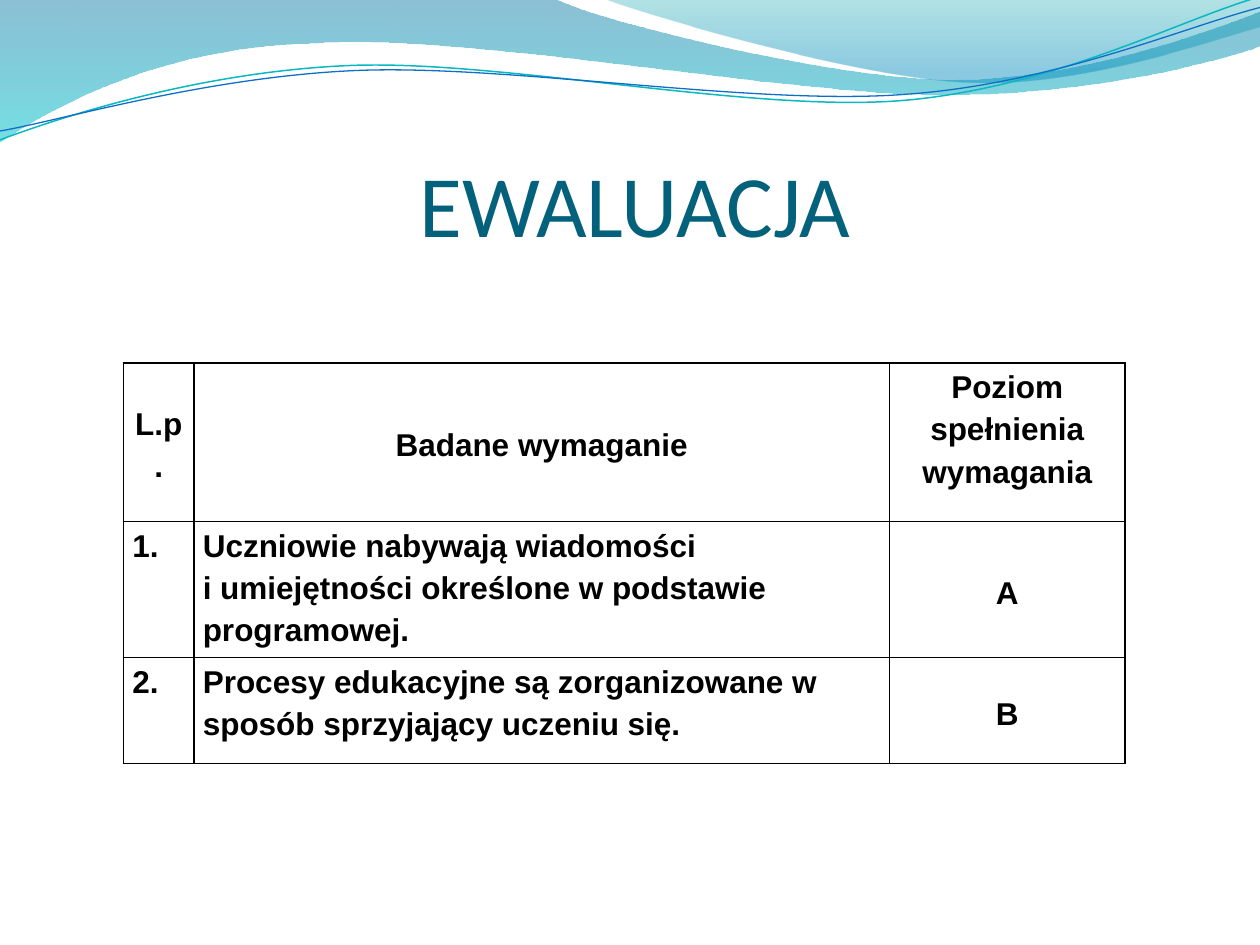
import math

import lxml.etree
import pptx
import pptx.dml.color
import pptx.enum.text
import pptx.oxml.ns
import pptx.util

Inches = pptx.util.Inches
Pt = pptx.util.Pt
qn = pptx.oxml.ns.qn
ALIGN = pptx.enum.text.PP_ALIGN
ANCHOR = pptx.enum.text.MSO_ANCHOR
NBSP = chr(160)

COLORS = {
    "title": "04617B", "text": "000000", "border": "000000",
    "deep": "0074A1", "aqua": "00C6CF", "teal": "00A1A9", "sky": "008BBF",
    "cyan line": "0AB8BF", "blue line": "0F6FC6",
}

WIDE_WAVE = [(0, 0), (4.4, -0.01), (4.76, 0.17, 6.64, 0.63, 7.58, 0.63),
             (8.53, 0.63, 9.58, 0.26, 10, 0.09), (10.01, 0.36),
             (9.83, 0.44, 8.7, 0.76, 7.46, 0.75), (6.22, 0.75, 3.82, 0.28, 2.57, 0.34),
             (1.29, 0.36, 0.46, 0.83, -0.01, 1.13)]
RIGHT_WAVE = [(4.79, -0.01), (5.09, 0.11, 6.82, 0.62, 7.69, 0.65),
              (8.56, 0.69, 9.61, 0.32, 10, 0.21), (10, 0)]
CYAN_CURVE = [(0, 1.11), (0.48, 0.93, 1.58, 0.57, 2.77, 0.52),
              (3.95, 0.47, 5.93, 0.89, 7.13, 0.8), (8.33, 0.71, 9.38, 0.15, 9.98, -0.02)]
BLUE_CURVE = [(0, 1.04), (0.47, 0.96, 1.64, 0.61, 2.83, 0.56),
              (4.03, 0.51, 5.97, 0.84, 7.17, 0.75), (8.36, 0.67, 9.41, 0.21, 10, 0.06)]
CURVE_TILT = 357.3

COLUMN_WIDTHS = [0.56, 5.52, 1.87]
ROW_HEIGHTS = [1.26, 1.03, 0.84]
REQUIREMENTS = [
    ["L.p.", "Badane wymaganie", "Poziom spełnienia wymagania"],
    ["1.", f"Uczniowie nabywają wiadomości i{NBSP}umiejętności określone "
           f"w{NBSP}podstawie programowej.", "A"],
    ["2.", "Procesy edukacyjne są zorganizowane w sposób sprzyjający uczeniu się.", "B"],
]


def color(name):
    return pptx.dml.color.RGBColor.from_string(COLORS[name])


def pairs(segment):
    return list(zip(segment[::2], segment[1::2]))


def turn(segments, degrees, center):
    cosine, sine = math.cos(math.radians(degrees)), math.sin(math.radians(degrees))
    turned = []
    for segment in segments:
        moved = []
        for x, y in pairs(segment):
            dx, dy = x - center[0], y - center[1]
            moved += [center[0] + dx * cosine - dy * sine, center[1] + dx * sine + dy * cosine]
        turned.append(tuple(moved))
    return turned


class Page:
    """Hold the text style and the current slide, and add elements to it."""

    def __init__(self, deck):
        self.slide = deck.slides.add_slide(deck.slide_layouts[6])
        self.title_font = "Calibri"
        self.body_font = "Arial"

    def outline(self, segments, close):
        points = [(Inches(x), Inches(y)) for segment in segments for x, y in pairs(segment)]
        builder = self.slide.shapes.build_freeform(*points[0])
        builder.add_line_segments(points[1:], close=close)
        shape = builder.convert_to_shape()
        shape.shadow.inherit = False
        lines = iter(list(shape.element.iter(qn("a:lnTo"))))
        for segment in segments[1:]:
            line = next(lines)
            if len(segment) == 6:
                line.tag = qn("a:cubicBezTo")
                for follower in (next(lines), next(lines)):
                    line.append(follower[0])
                    follower.getparent().remove(follower)
        return shape

    def wave(self, segments, stops):
        shape = self.outline(segments, True)
        shape.line.fill.background()
        shape.fill.gradient()
        shape.fill.gradient_angle = 270
        for stop, (position, name, _) in zip(shape.fill.gradient_stops, stops):
            stop.position = position
            stop.color.rgb = color(name)
        tints = shape.element.spPr.iter(qn("a:srgbClr"))
        for tint, (_, _, opacity) in zip(tints, stops):
            lxml.etree.SubElement(tint, qn("a:alpha"), val=str(opacity * 1000))

    def curve(self, segments, name, width, center):
        shape = self.outline(turn(segments, -CURVE_TILT, center), False)
        shape.rotation = CURVE_TILT
        shape.fill.background()
        shape.line.color.rgb = color(name)
        shape.line.width = Pt(width)

    def style(self, para, font, size, name, align, bold=False):
        para.alignment = align
        for span in para.runs:
            span.font.name = font
            span.font.size = Pt(size)
            span.font.bold = bold
            span.font.color.rgb = color(name)

    def title(self, text, left, top, width, height):
        box = self.slide.shapes.add_textbox(Inches(left), Inches(top), Inches(width), Inches(height))
        frame = box.text_frame
        frame.word_wrap = True
        frame.vertical_anchor = ANCHOR.BOTTOM
        frame.margin_left = frame.margin_right = frame.margin_bottom = 0
        frame.margin_top = Inches(0.05)
        frame.text = text
        self.style(frame.paragraphs[0], self.title_font, 50, "title", ALIGN.CENTER)

    def borders(self, cell, width):
        properties = cell._tc.get_or_add_tcPr()
        for index, side in enumerate(("lnL", "lnR", "lnT", "lnB")):
            line = lxml.etree.Element(qn("a:" + side), w=str(Pt(width)))
            fill = lxml.etree.SubElement(line, qn("a:solidFill"))
            lxml.etree.SubElement(fill, qn("a:srgbClr"), val=COLORS["border"])
            properties.insert(index, line)

    def cell(self, cell, text, align, anchor):
        cell.text_frame.text = text
        cell.vertical_anchor = anchor
        cell.margin_left = cell.margin_right = Inches(0.07)
        cell.margin_top = cell.margin_bottom = 0
        para = cell.text_frame.paragraphs[0]
        para.line_spacing = 1.2
        para.space_before = Pt(3)
        para.space_after = Pt(0 if align == ALIGN.LEFT else 3)
        self.style(para, self.body_font, 18, "text", align, bold=True)
        cell.fill.background()
        self.borders(cell, 1)

    def table(self, rows, left, top, widths, heights):
        table = self.slide.shapes.add_table(
            len(rows), len(widths), Inches(left), Inches(top),
            Inches(sum(widths)), Inches(sum(heights))).table
        table.first_row = table.horz_banding = False
        for column, width in zip(table.columns, widths):
            column.width = Inches(width)
        for row, height in zip(table.rows, heights):
            row.height = Inches(height)
        last = len(widths) - 1
        for r, texts in enumerate(rows):
            for c, text in enumerate(texts):
                centred = r == 0 or c == last
                middle = (r == 0) != (c == last)
                self.cell(table.cell(r, c), text,
                          ALIGN.CENTER if centred else ALIGN.LEFT,
                          ANCHOR.MIDDLE if middle else ANCHOR.TOP)


def main():
    deck = pptx.Presentation()
    deck.slide_width, deck.slide_height = Inches(10), Inches(7.5)
    page = Page(deck)
    page.wave(WIDE_WAVE, [(0, "deep", 45), (1, "aqua", 55)])
    page.wave(RIGHT_WAVE, [(0, "teal", 30), (0.8, "sky", 45)])
    page.curve(CYAN_CURVE, "cyan line", 0.85, (4.99, 0.58))
    page.curve(BLUE_CURVE, "blue line", 0.75, (5, 0.59))
    page.title("EWALUACJA", 0.5, 0.77, 9.08, 1.25)
    page.table(REQUIREMENTS, 0.98, 2.88, COLUMN_WIDTHS, ROW_HEIGHTS)
    deck.save("out.pptx")


if __name__ == "__main__":
    main()
